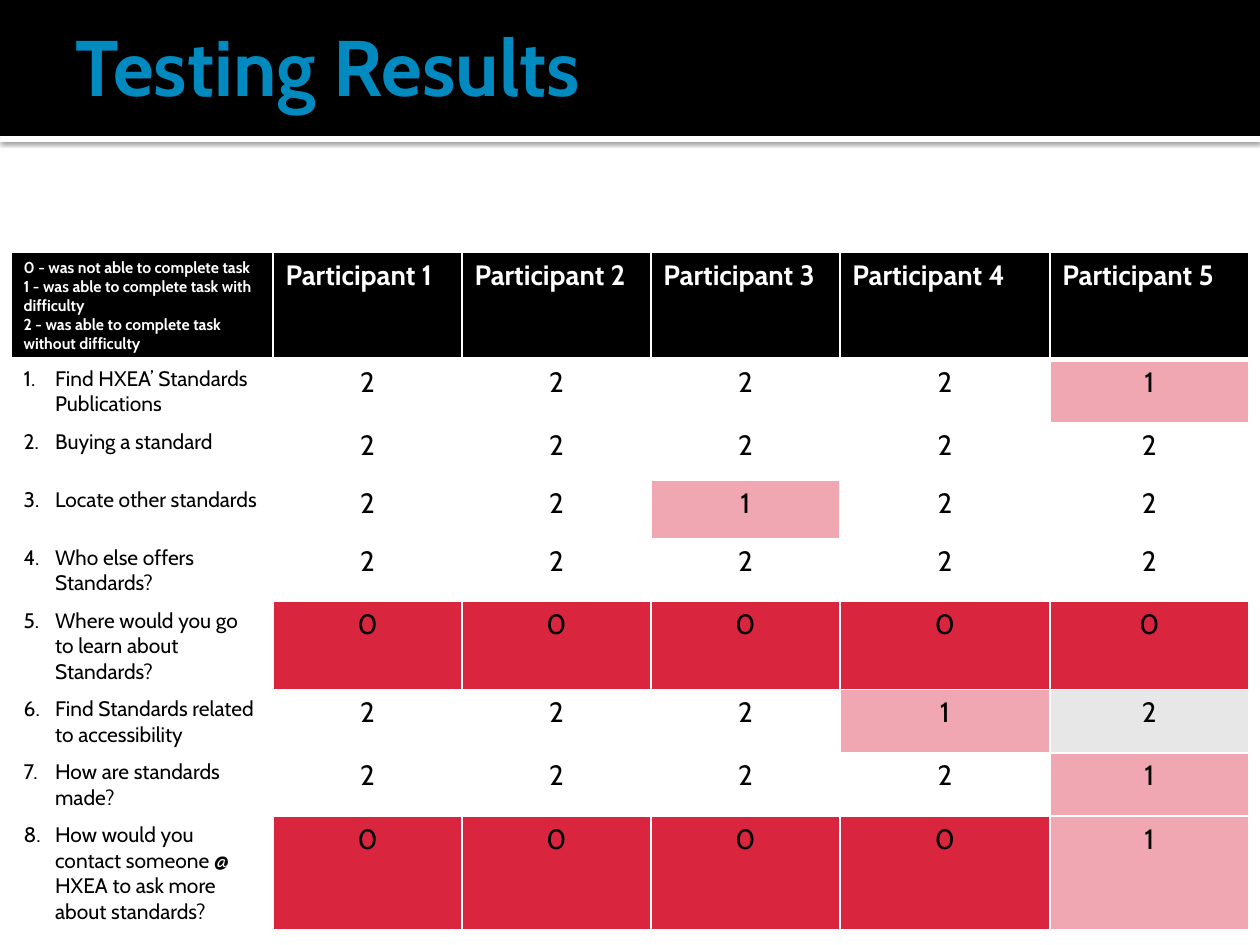
from lxml import etree
from pptx import Presentation
from pptx.dml.color import RGBColor
from pptx.enum.shapes import MSO_SHAPE
from pptx.enum.text import MSO_ANCHOR, PP_ALIGN
from pptx.oxml.ns import qn
from pptx.util import Emu, Pt

RECT = MSO_SHAPE.RECTANGLE
MIDDLE = MSO_ANCHOR.MIDDLE
LEFT, CENTER = PP_ALIGN.LEFT, PP_ALIGN.CENTER

# Content
TITLE = "Testing Results"
LEGEND = ("0 - was not able to complete task\n"
          "1 - was able to complete task with difficulty\n"
          "2 - was able to complete task without difficulty")
PARTICIPANTS = [f"Participant {n}" for n in range(1, 6)]
TASKS = [
    ("Find HXEA’ Standards Publications", [2, 2, 2, 2, 1]),
    ("Buying a standard", [2, 2, 2, 2, 2]),
    ("Locate other standards", [2, 2, 1, 2, 2]),
    ("Who else offers Standards?", [2, 2, 2, 2, 2]),
    ("Where would you go to learn about Standards?", [0, 0, 0, 0, 0]),
    ("Find Standards related to accessibility", [2, 2, 2, 1, 2]),
    ("How are standards made?", [2, 2, 2, 2, 1]),
    ("How would you contact someone @ HXEA to ask more about standards?",
     [0, 0, 0, 0, 1]),
]

# Style and layout, in px
FONT = "Cabin"
COLORS = {"black": "000000", "white": "FFFFFF", "title": "008ABF",
          "fail": "D9253E", "hard": "F0A7B1", "gray": "E7E7E7"}
SCORE_FILL = {0: "fail", 1: "hard", 2: "white"}
SPECIAL_FILL = {(6, 5): "gray"}  # (task, participant)
PX = 914400 // 126
COL_W = [262, 189, 189, 189, 210, 199]
ROW_H = [94, 63] + [58] * 7
TABLE_X, TABLE_Y = 11, 252


def px(*values):
    return [Emu(v * PX) for v in values]


def rgb(name):
    return RGBColor.from_string(COLORS[name])


def write(tf, text, size, color="black", bold=False, align=LEFT, number=None):
    tf.word_wrap = True
    p = tf.paragraphs[0]
    p.alignment = align
    for i, line in enumerate(text.split("\n")):
        if i:
            p.add_line_break()
        r = p.add_run()
        r.text = line
        r.font.name, r.font.size, r.font.bold = FONT, Pt(size), bold
        r.font.color.rgb = rgb(color)
    if number:
        pPr = p._p.get_or_add_pPr()
        indent = 228600
        pPr.set("marL", str(indent))
        pPr.set("indent", str(-indent))
        etree.SubElement(pPr, qn("a:buFont"), typeface="+mj-lt")
        etree.SubElement(pPr, qn("a:buAutoNum"), type="arabicPeriod",
                         startAt=str(number))


def add_bar(s, color, *box):
    sp = s.shapes.add_shape(RECT, *px(*box))
    sp.shadow.inherit = False
    sp.fill.solid()
    sp.fill.fore_color.rgb = rgb(color)
    sp.line.fill.background()
    return sp


def add_shadow(sp):
    effects = sp._element.spPr.find(qn("a:effectLst"))
    shadow = etree.SubElement(effects, qn("a:outerShdw"), blurRad=str(Pt(2.5)),
                              dist=str(Pt(0.8)), dir="5400000")
    color = etree.SubElement(shadow, qn("a:srgbClr"), val=COLORS["black"])
    etree.SubElement(color, qn("a:alpha"), val="60000")


def style_cell(cell, fill, bottom=1):
    tcPr = cell._tc.get_or_add_tcPr()
    for side, width in (("L", 1), ("R", 1), ("T", 1), ("B", bottom)):
        ln = etree.SubElement(tcPr, qn(f"a:ln{side}"), w=str(Pt(width)))
        solid = etree.SubElement(ln, qn("a:solidFill"))
        etree.SubElement(solid, qn("a:srgbClr"), val=COLORS["white"])
    cell.fill.solid()
    cell.fill.fore_color.rgb = rgb(fill)


prs = Presentation()
prs.slide_width, prs.slide_height = px(1260, 945)
s = prs.slides.add_slide(prs.slide_layouts[6])

# Title band with a shadowed white rule beneath
add_shadow(add_bar(s, "white", 0, 136, 1260, 6))
add_bar(s, "black", 0, 0, 1260, 136)
tf = s.shapes.add_textbox(*px(63, -21, 1134, 172)).text_frame
tf.vertical_anchor = MIDDLE
write(tf, TITLE, 45, color="title", bold=True)

# Results table
frame = s.shapes.add_table(len(ROW_H), len(COL_W),
                           *px(TABLE_X, TABLE_Y, sum(COL_W), sum(ROW_H)))
table = frame.table
table.first_row = table.horz_banding = False
for col, width in zip(table.columns, COL_W):
    col.width = Emu(width * PX)
for row, height in zip(table.rows, ROW_H):
    row.height = Emu(height * PX)

# Header row
for c, text in enumerate([LEGEND] + PARTICIPANTS):
    cell = table.cell(0, c)
    style_cell(cell, "black", bottom=3)
    write(cell.text_frame, text, 16 if c else 9, color="white", bold=True)

# Task rows
for n, (task, scores) in enumerate(TASKS, 1):
    cell = table.cell(n, 0)
    style_cell(cell, "white")
    write(cell.text_frame, task, 12, number=n)
    for c, score in enumerate(scores, 1):
        cell = table.cell(n, c)
        style_cell(cell, SPECIAL_FILL.get((n, c), SCORE_FILL[score]))
        write(cell.text_frame, str(score), 16, align=CENTER)

prs.save("out.pptx")
